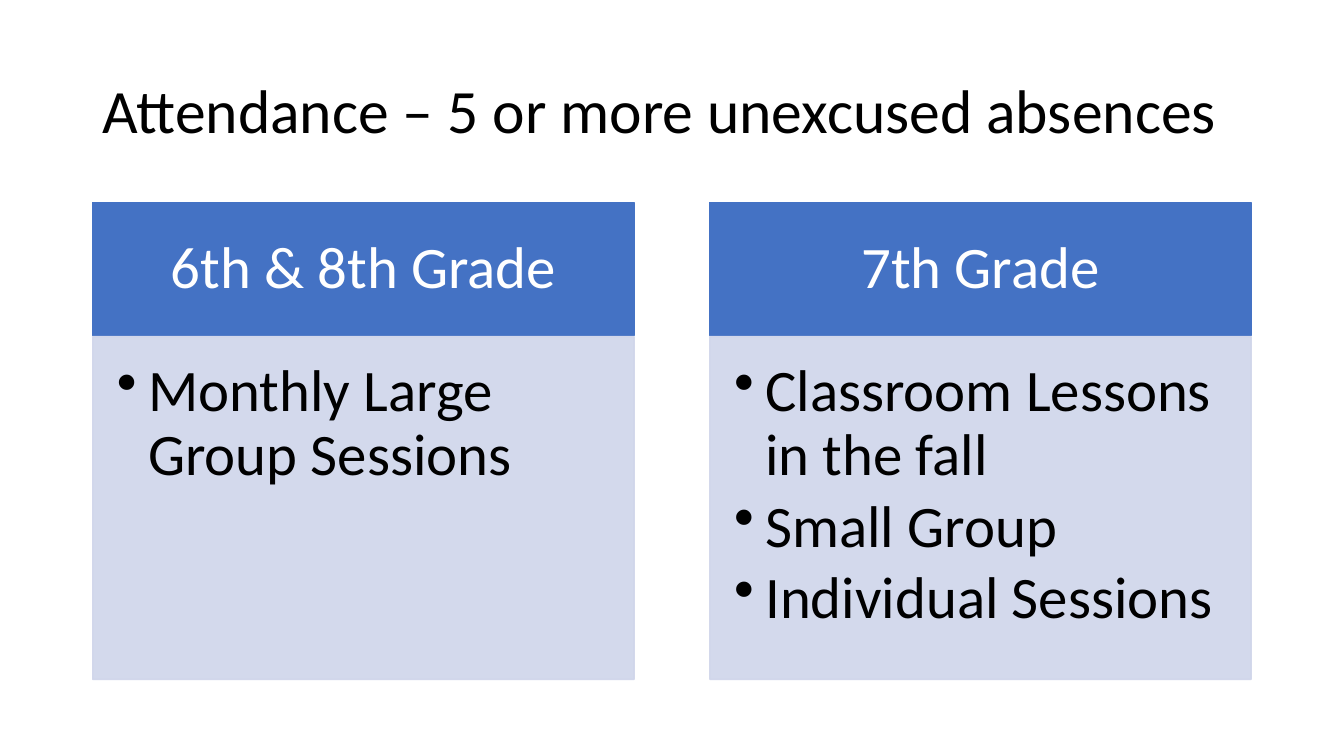
from dataclasses import dataclass

from pptx import Presentation
from pptx.dml.color import RGBColor
from pptx.enum.shapes import MSO_SHAPE
from pptx.enum.text import MSO_ANCHOR, PP_ALIGN
from pptx.oxml.ns import qn
from pptx.oxml.xmlchemy import OxmlElement
from pptx.util import Inches, Pt


@dataclass(frozen=True)
class Theme:
    face: str = "Calibri"
    black: RGBColor = RGBColor(0x00, 0x00, 0x00)
    white: RGBColor = RGBColor(0xFF, 0xFF, 0xFF)
    blue: RGBColor = RGBColor(0x44, 0x72, 0xC4)
    pale: RGBColor = RGBColor(0xCF, 0xD5, 0xEA)
    title: Pt = Pt(44)
    text: Pt = Pt(42)


theme = Theme()


def write(shape, lines, size, color, pads, anchor, align, gap=0, bullet=False):
    """Fill a shape with one paragraph per line; pads are left, top, right, bottom."""
    frame = shape.text_frame
    form = dict(zip(("margin_left", "margin_top", "margin_right", "margin_bottom"),
                    map(Inches, pads)), word_wrap=True, vertical_anchor=anchor)
    for name, value in form.items():
        setattr(frame, name, value)
    frame.text = "\n".join(lines)
    for para in frame.paragraphs:
        if bullet:
            props = para._p.get_or_add_pPr()
            props.set("marL", str(Inches(0.31)))
            props.set("indent", str(-Inches(0.31)))
            mark = OxmlElement("a:buChar")
            mark.set("char", "•")
            props.append(mark)
        for name, value in dict(alignment=align, line_spacing=0.9,
                                space_after=Pt(gap)).items():
            setattr(para, name, value)
        for name, value in dict(name=theme.face, size=size).items():
            setattr(para.font, name, value)
        para.font.color.rgb = color


def block(left, top, high, color, alpha=None):
    """Add a column rectangle, optionally with a percentage of opacity."""
    shape = slide.shapes.add_shape(MSO_SHAPE.RECTANGLE, Inches(left), Inches(top),
                                   Inches(5.37), Inches(high))
    shape.shadow.inherit = False
    shape.fill.solid()
    shape.fill.fore_color.rgb = color
    shape.line.color.rgb = color
    shape.line.width = Pt(1)
    if alpha:
        for node in shape._element.spPr.iter(qn("a:srgbClr")):
            tint = OxmlElement("a:alpha")
            tint.set("val", str(alpha * 1000))
            node.append(tint)
    return shape


deck = Presentation()
deck.slide_width, deck.slide_height = Inches(13.33), Inches(7.5)
slide = deck.slides.add_slide(deck.slide_layouts[6])

title = slide.shapes.add_textbox(Inches(0.92), Inches(0.4), Inches(11.5), Inches(1.45))
write(title, ["Attendance – 5 or more unexcused absences"], theme.title, theme.black,
      (0.1, 0.05, 0.1, 0.05), MSO_ANCHOR.MIDDLE, PP_ALIGN.LEFT)

columns = [
    ("6th & 8th Grade", ["Monthly Large Group Sessions"]),
    ("7th Grade", ["Classroom Lessons in the fall", "Small Group", "Individual Sessions"]),
]
for index, (grade, items) in enumerate(columns):
    left = 0.92 + index * 6.12
    head = block(left, 2.01, 1.32, theme.blue)
    write(head, [grade], theme.text, theme.white, (0.33, 0.19, 0.33, 0.19),
          MSO_ANCHOR.MIDDLE, PP_ALIGN.CENTER)
    body = block(left, 3.34, 3.4, theme.pale, alpha=90)
    write(body, items, theme.text, theme.black, (0.24, 0.24, 0.33, 0.37),
          MSO_ANCHOR.TOP, PP_ALIGN.LEFT, gap=6, bullet=True)

deck.save("out.pptx")
